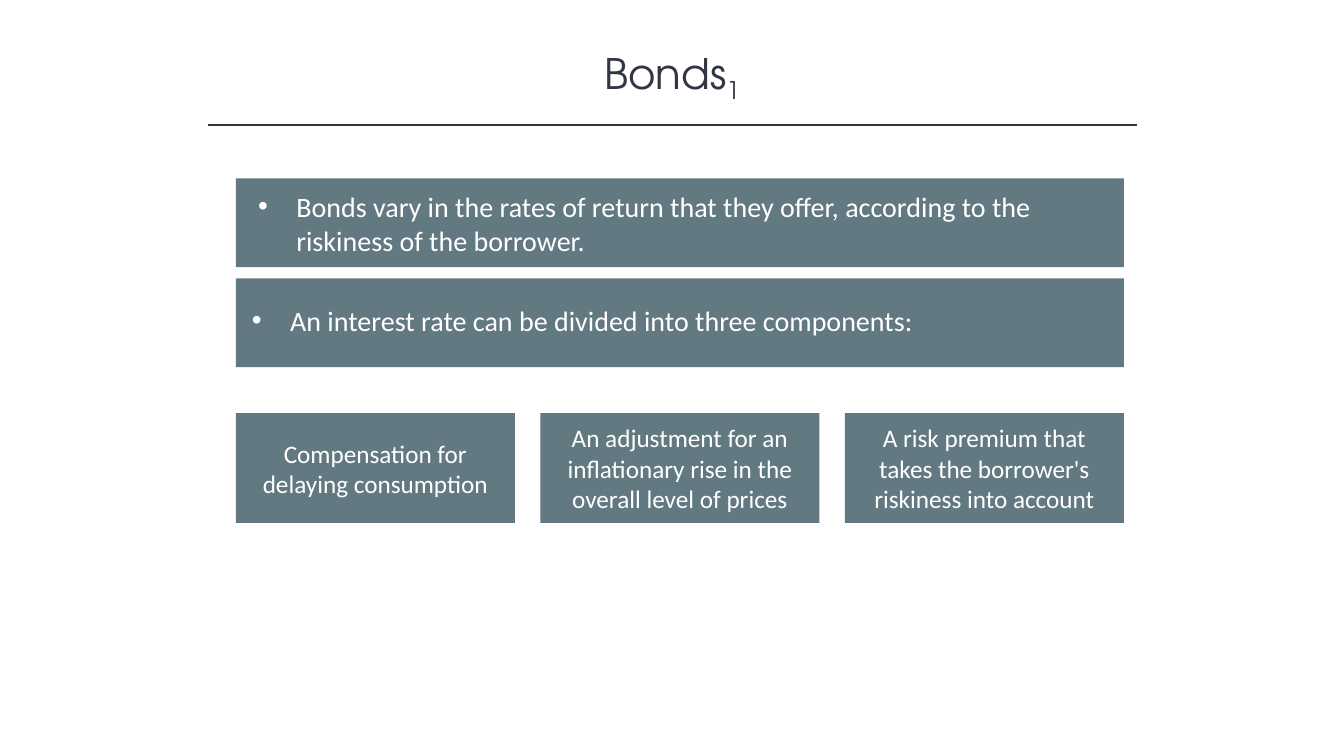
import pptx
import pptx.dml.color
import pptx.enum.shapes
import pptx.enum.text
import pptx.oxml.ns
import pptx.util
from lxml import etree


def colour(value):
    return pptx.dml.color.RGBColor.from_string(value)


class BondsSlide:
    COLUMNS, ROWS = 48, 27
    INK, PANEL, WHITE = "323542", "627981", "FFFFFF"
    TITLE_FONT, BODY_FONT = "TeX Gyre Adventor", "Calibri"

    def __init__(self, presentation):
        self.column = presentation.slide_width / self.COLUMNS
        self.row = presentation.slide_height / self.ROWS
        self.slide = presentation.slides.add_slide(presentation.slide_layouts[5])

    def place(self, left, top, width, height):
        return (round(left * self.column), round(top * self.row),
                round(width * self.column), round(height * self.row))

    def style_run(self, run, size, font_name, font_colour):
        run.font.size = pptx.util.Pt(size)
        run.font.name = font_name
        run.font.color.rgb = colour(font_colour)

    def title(self, text, subscript, area):
        shape = self.slide.shapes.title
        shape.left, shape.top, shape.width, shape.height = self.place(*area)
        frame = shape.text_frame
        frame.text = text
        frame.vertical_anchor = pptx.enum.text.MSO_ANCHOR.TOP
        frame.auto_size = pptx.enum.text.MSO_AUTO_SIZE.SHAPE_TO_FIT_TEXT
        paragraph = frame.paragraphs[0]
        paragraph.alignment = pptx.enum.text.PP_ALIGN.CENTER
        lowered = paragraph.add_run()
        lowered.text = subscript
        for run in paragraph.runs:
            self.style_run(run, 30, self.TITLE_FONT, self.INK)
        lowered.font._element.set("baseline", "-25000")

    def rule(self, left, right, row):
        start_x, y, end_x, _ = self.place(left, row, right, 0)
        connector = self.slide.shapes.add_connector(
            pptx.enum.shapes.MSO_CONNECTOR.STRAIGHT, start_x, y, end_x, y)
        connector.line.color.rgb = colour(self.INK)
        connector.line.width = pptx.util.Pt(1)
        etree.SubElement(connector._element.spPr, pptx.oxml.ns.qn("a:effectLst"))

    def panel(self, shapes, area):
        shape = shapes.add_shape(
            pptx.enum.shapes.MSO_SHAPE.RECTANGLE, *self.place(*area))
        shape.shadow.inherit = False
        shape.fill.solid()
        shape.fill.fore_color.rgb = colour(self.PANEL)
        shape.line.fill.background()
        return shape

    def label(self, shape, text, size, alignment):
        frame = shape.text_frame
        frame.word_wrap = True
        frame.text = text
        paragraph = frame.paragraphs[0]
        paragraph.alignment = alignment
        self.style_run(paragraph.runs[0], size, self.BODY_FONT, self.WHITE)
        return paragraph

    def bullet_bar(self, text, bar_area, text_area):
        group = self.slide.shapes.add_group_shape()
        self.panel(group.shapes, bar_area)
        shape = self.panel(group.shapes, text_area)
        paragraph = self.label(shape, text, 20, pptx.enum.text.PP_ALIGN.LEFT)
        frame = shape.text_frame
        frame.vertical_anchor = pptx.enum.text.MSO_ANCHOR.TOP
        frame.auto_size = pptx.enum.text.MSO_AUTO_SIZE.SHAPE_TO_FIT_TEXT
        properties = paragraph._p.get_or_add_pPr()
        indent = pptx.util.Inches(0.38)
        properties.set("marL", str(indent))
        properties.set("indent", str(-indent))
        etree.SubElement(properties, pptx.oxml.ns.qn("a:buFont"), typeface="Arial")
        etree.SubElement(properties, pptx.oxml.ns.qn("a:buChar"), char="•")

    def card(self, text, area):
        shape = self.panel(self.slide.shapes, area)
        shape.text_frame.vertical_anchor = pptx.enum.text.MSO_ANCHOR.MIDDLE
        self.label(shape, text, 18, pptx.enum.text.PP_ALIGN.CENTER)


def main():
    presentation = pptx.Presentation()
    presentation.slide_width = pptx.util.Inches(13.33)
    presentation.slide_height = pptx.util.Inches(7.5)
    bonds = BondsSlide(presentation)
    bonds.title("Bonds", "1", (6, 1.51, 36, 2.2))
    bonds.rule(7.42, 40.61, 4.46)

    left, width = 8.42, 31.72
    bars = [
        ("Bonds vary in the rates of return that they offer, "
         "according to the riskiness of the borrower.", (8.86, 6.59, 30.74, 2.77)),
        ("An interest rate can be divided into three components:",
         (8.64, 10.66, 30.74, 1.58)),
    ]
    for index, (text, text_area) in enumerate(bars):
        bonds.bullet_bar(text, (left, 6.37 + index * 3.57, width, 3.17), text_area)

    components = [
        "Compensation for delaying consumption",
        "An adjustment for an inflationary rise in the overall level of prices",
        "A risk premium that takes the borrower's riskiness into account",
    ]
    card_width = 9.97
    step = (width - card_width) / (len(components) - 1)
    for index, text in enumerate(components):
        bonds.card(text, (left + index * step, 14.76, card_width, 3.92))
    presentation.save("out.pptx")


if __name__ == "__main__":
    main()
